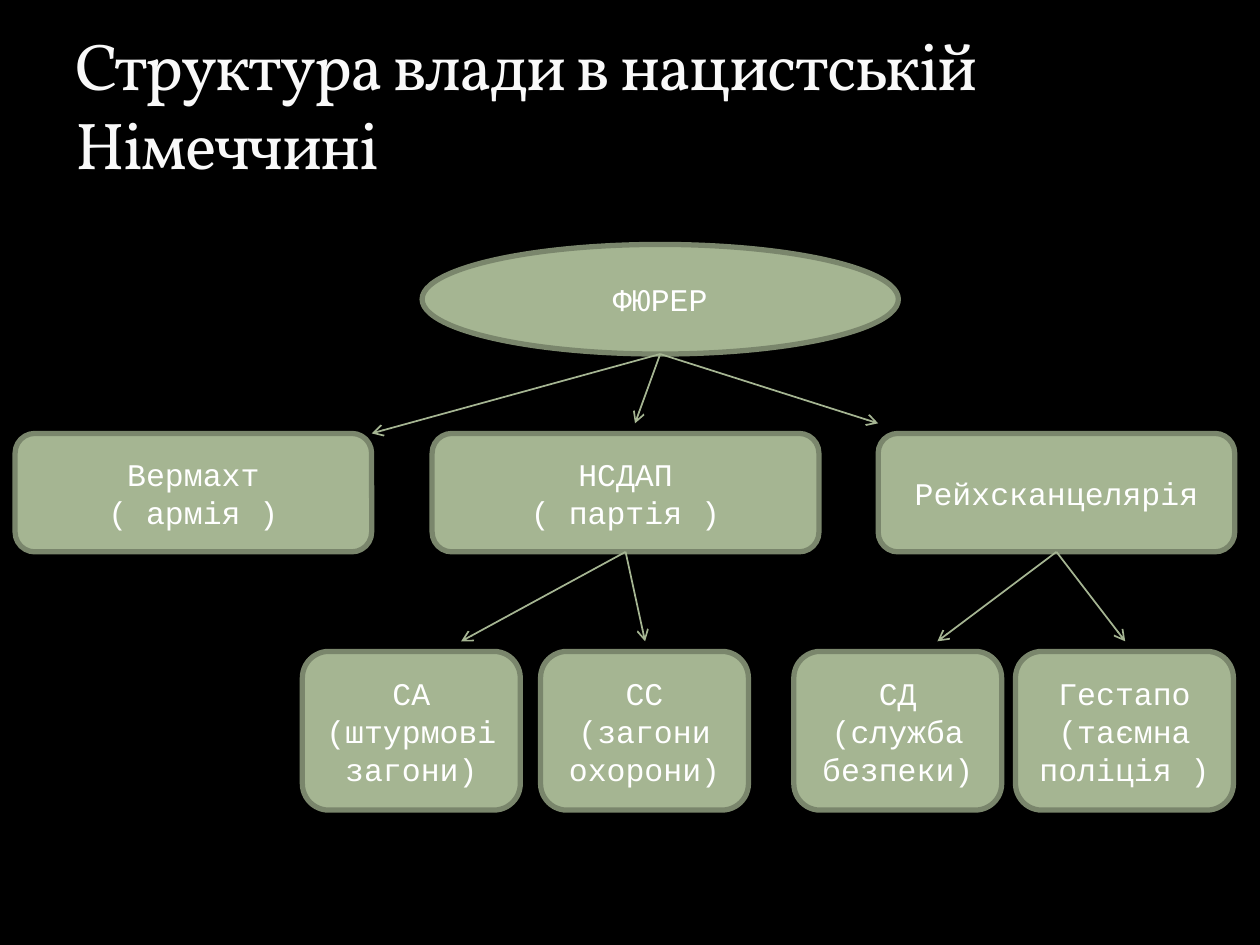
from lxml import etree
from pptx import Presentation
from pptx.dml.color import RGBColor
from pptx.enum.shapes import MSO_CONNECTOR, MSO_SHAPE
from pptx.enum.text import MSO_ANCHOR, PP_ALIGN
from pptx.oxml.ns import qn
from pptx.util import Inches, Pt

OVAL = MSO_SHAPE.OVAL
ROUNDED = MSO_SHAPE.ROUNDED_RECTANGLE
STRAIGHT = MSO_CONNECTOR.STRAIGHT
MIDDLE = MSO_ANCHOR.MIDDLE
BOTTOM = MSO_ANCHOR.BOTTOM
CENTER = PP_ALIGN.CENTER
LEFT = PP_ALIGN.LEFT

BLACK = RGBColor(0x00, 0x00, 0x00)
WHITE = RGBColor(0xFF, 0xFF, 0xFF)
TITLE_WHITE = RGBColor(0xF9, 0xF9, 0xF9)
SAGE = RGBColor(0xA5, 0xB5, 0x92)
DARK_SAGE = RGBColor(0x7A, 0x86, 0x6C)

TITLE_FONT = {"name": "Vollkorn", "size": Pt(37.8)}
NODE_FONT = {"name": "Courier New", "size": Pt(18)}

BRANCH_TOP, BRANCH_HEIGHT = 3.44, 0.94
UNIT_TOP, UNIT_HEIGHT = 5.17, 1.26
UNIT_ARROW_END = 5.09
LEADER_BOTTOM = (5.24, 2.81)
LEADER_ARROW_ENDS = [(5.04, 3.36), (2.95, 3.44), (6.97, 3.36)]

BRANCHES = [
    (0.12, 2.83, ["Вермахт", "( армія )"], []),
    (3.43, 3.07, ["НСДАП", "( партія )"], [
        (2.4, 1.73, ["СА", "(штурмові загони)"], 3.66),
        (4.29, 1.65, ["СС", "(загони охорони)"], 5.12),
    ]),
    (6.97, 2.83, ["Рейхсканцелярія"], [
        (6.3, 1.65, ["СД", "(служба безпеки)"], 7.44),
        (8.06, 1.73, ["Гестапо", "(таємна поліція )"], 8.93),
    ]),
]


def write_lines(text_frame, lines, font_format, color, alignment):
    """Write one formatted paragraph per line."""
    text_frame.word_wrap = True
    for index, line in enumerate(lines):
        paragraph = text_frame.add_paragraph() if index else text_frame.paragraphs[0]
        paragraph.alignment = alignment
        run = paragraph.add_run()
        run.text = line
        for name, value in font_format.items():
            setattr(run.font, name, value)
        run.font.color.rgb = color


def add_title(slide, text):
    """Add the slide title with slightly tightened letters."""
    box = slide.shapes.add_textbox(Inches(0.5), Inches(0.17), Inches(9), Inches(1.33))
    box.text_frame.vertical_anchor = BOTTOM
    write_lines(box.text_frame, [text], TITLE_FONT, TITLE_WHITE, LEFT)
    run = box.text_frame.paragraphs[0].runs[0]
    run.font._element.set("spc", "-100")


def add_node(slide, kind, left, top, width, height, lines):
    """Add one labelled node of the hierarchy."""
    shape = slide.shapes.add_shape(
        kind, Inches(left), Inches(top), Inches(width), Inches(height))
    shape.shadow.inherit = False
    shape.fill.solid()
    shape.fill.fore_color.rgb = SAGE
    shape.line.color.rgb = DARK_SAGE
    shape.line.width = Pt(3)
    shape.text_frame.vertical_anchor = MIDDLE
    write_lines(shape.text_frame, lines, NODE_FONT, WHITE, CENTER)
    return shape


def add_arrow(slide, start, end):
    """Add a thin straight arrow pointing at its end."""
    arrow = slide.shapes.add_connector(
        STRAIGHT, *(Inches(value) for value in (*start, *end)))
    arrow.line.color.rgb = SAGE
    arrow.line.width = Pt(1)
    line = arrow.line._get_or_add_ln()
    etree.SubElement(line, qn("a:tailEnd"), type="arrow")
    etree.SubElement(arrow._element.spPr, qn("a:effectLst"))
    return arrow


def add_branch(slide, left, width, lines, units):
    """Add a branch with its subordinate units and their arrows."""
    branch = add_node(slide, ROUNDED, left, BRANCH_TOP, width, BRANCH_HEIGHT, lines)
    start = (left + width / 2, BRANCH_TOP + BRANCH_HEIGHT)
    for unit_left, unit_width, unit_lines, arrow_end in units:
        add_node(slide, ROUNDED, unit_left, UNIT_TOP, unit_width, UNIT_HEIGHT, unit_lines)
        arrow = add_arrow(slide, start, (arrow_end, UNIT_ARROW_END))
        arrow.begin_connect(branch, 2)


def main():
    """Build the slide and save it."""
    presentation = Presentation()
    presentation.slide_width = Inches(10)
    presentation.slide_height = Inches(7.5)
    slide = presentation.slides.add_slide(presentation.slide_layouts[6])
    slide.background.fill.solid()
    slide.background.fill.fore_color.rgb = BLACK
    add_title(slide, "Структура влади в нацистській Німеччині")
    add_node(slide, OVAL, 3.35, 1.94, 3.78, 0.87, ["ФЮРЕР"])
    for branch in BRANCHES:
        add_branch(slide, *branch)
    for end in LEADER_ARROW_ENDS:
        add_arrow(slide, LEADER_BOTTOM, end)
    presentation.save("out.pptx")


if __name__ == "__main__":
    main()
